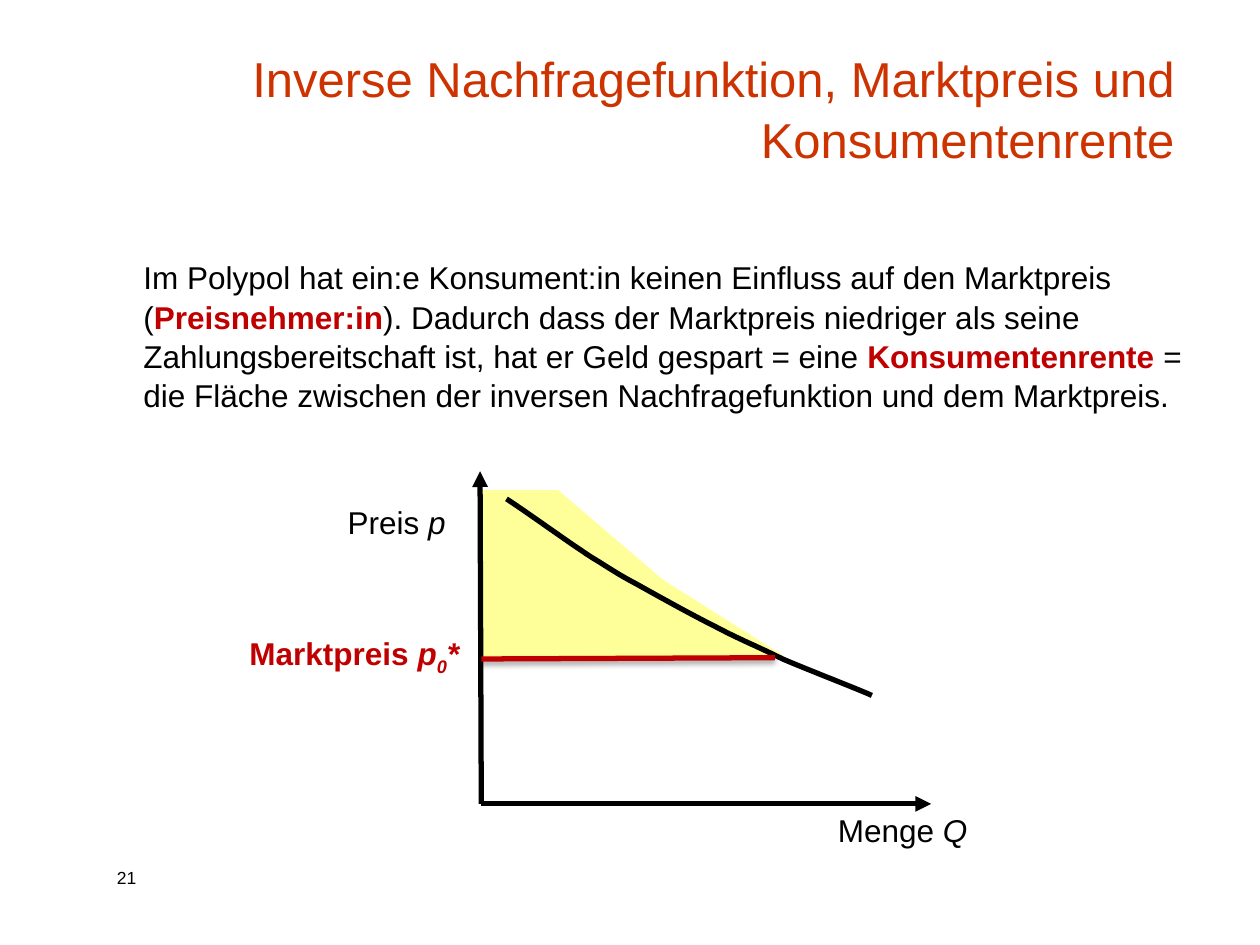
from lxml import etree
from pptx import Presentation, util as u
from pptx.dml.color import RGBColor
from pptx.enum import shapes, text
from pptx.oxml import ns, parse_xml

BLACK = RGBColor(0x00, 0x00, 0x00)
ORANGE = RGBColor(0xCC, 0x33, 0x00)
RED = RGBColor(0xC0, 0x00, 0x00)
YELLOW = RGBColor(0xFF, 0xFF, 0x99)

# Grid of 100 columns by 75 rows
CELL = u.Inches(0.1)
COLUMNS, ROWS = 100, 75
INSETS = (1, 0.5)
SHADOW = (
    f'<a:effectLst {ns.nsdecls("a")}><a:outerShdw blurRad="{u.Pt(3.1)}" '
    f'dist="{u.Pt(1.8)}" dir="5400000" rotWithShape="0"><a:srgbClr val="000000">'
    '<a:alpha val="35000"/></a:srgbClr></a:outerShdw></a:effectLst>'
)


def cells(*counts):
    return [round(count * CELL) for count in counts]


def shift(area, point):
    return area[0] + point[0], area[1] + point[1]


def write(box, area, spans, insets=(0, 0), size=18, color=BLACK, para_format=None,
          anchor=text.MSO_ANCHOR.TOP):
    """Place a text shape and fill it with (words, font format) spans."""
    box.left, box.top, box.width, box.height = cells(*area)
    side, edge = cells(*insets)
    frame = box.text_frame
    frame_format = {
        "margin_left": side, "margin_right": side, "margin_top": edge,
        "margin_bottom": edge, "word_wrap": True, "vertical_anchor": anchor,
        "auto_size": text.MSO_AUTO_SIZE.NONE,
    }
    for name, value in frame_format.items():
        setattr(frame, name, value)
    para = frame.paragraphs[0]
    for name, value in (para_format or {}).items():
        setattr(para, name, value)
    for words, span_format in spans:
        span = para.add_run()
        span.text = words
        font_format = {"name": "Arial", "size": u.Pt(size), "bold": False} | span_format
        span.font.color.rgb = font_format.pop("color", color)
        baseline = font_format.pop("baseline", None)
        for name, value in font_format.items():
            setattr(span.font, name, value)
        if baseline is not None:
            span.font._element.set("baseline", str(baseline))


def add_text(page, area, spans, **options):
    write(page.shapes.add_textbox(0, 0, 0, 0), area, spans, **options)


def add_line(page, area, start, end, color=BLACK, arrow=False, shadow=False):
    line = page.shapes.add_connector(
        shapes.MSO_CONNECTOR.STRAIGHT, *cells(*shift(area, start), *shift(area, end)))
    line.line.color.rgb = color
    line.line.width = u.Pt(3)
    if arrow:
        etree.SubElement(line.line._get_or_add_ln(), ns.qn("a:tailEnd"), type="triangle")
    properties = line._element.spPr
    if shadow:
        properties.append(parse_xml(SHADOW))
    else:
        etree.SubElement(properties, ns.qn("a:effectLst"))


def add_outline(page, area, points, close):
    corners = [cells(*shift(area, point)) for point in points]
    builder = page.shapes.build_freeform(*corners[0])
    builder.add_line_segments(corners[1:], close=close)
    outline = builder.convert_to_shape()
    outline.shadow.inherit = False
    return outline


def smooth(start, curves, steps=12):
    """Sample a chain of cubic curves, each given by two handles and an end."""
    points = [start]
    for curve in curves:
        knots = (points[-1], *curve)
        for step in range(1, steps + 1):
            t = step / steps
            weights = ((1 - t) ** 3, 3 * t * (1 - t) ** 2, 3 * t * t * (1 - t), t ** 3)
            points.append(tuple(
                sum(weight * knot[axis] for weight, knot in zip(weights, knots))
                for axis in (0, 1)))
    return points


def add_heading(page, area):
    write(page.shapes.title, area,
          [("Inverse Nachfragefunktion, Marktpreis und Konsumentenrente", {})],
          insets=INSETS, size=28, color=ORANGE, anchor=text.MSO_ANCHOR.BOTTOM,
          para_format={"alignment": text.PP_ALIGN.RIGHT, "line_spacing": 1.04})


def add_explanation(page, area):
    term = {"bold": True, "color": RED}
    add_text(page, area, [
        ("Im Polypol hat ein:e Konsument:in keinen Einfluss auf den Marktpreis (", {}),
        ("Preisnehmer:in", term),
        ("). Dadurch dass der Marktpreis niedriger als seine Zahlungsbereitschaft ist, "
         "hat er Geld gespart = eine ", {}),
        ("Konsumentenrente ", term),
        ("= die Fläche zwischen der inversen Nachfragefunktion und dem Marktpreis.", {}),
    ], insets=INSETS, para_format={"line_spacing": 1.04})


def add_diagram(page, area):
    origin = (18.4, 26.4)

    # Consumer surplus
    surplus = add_outline(page, area, [
        (18.4, 14.8), (42.6, 14.8), (32.8, 8.6), (24.5, 1.5), (18.4, 1.5)], close=True)
    surplus.fill.solid()
    surplus.fill.fore_color.rgb = YELLOW
    surplus.line.fill.background()

    # Axes
    for end in ((54.1, 26.4), (18.3, 0)):
        add_line(page, area, origin, end, arrow=True)

    # Inverse demand curve
    demand = add_outline(page, area, smooth((49.4, 17.8), [
        ((48.3, 17.3), (44.4, 15.8), (42.3, 14.9)),
        ((40.3, 13.9), (39, 13.4), (37.1, 12.4)),
        ((35.1, 11.4), (32.4, 9.9), (30.8, 9)),
        ((29.1, 8.1), (28.9, 7.9), (27.1, 6.8)),
        ((25.4, 5.7), (21.8, 3.1), (20.4, 2.2)),
    ]), close=False)
    demand.fill.background()
    demand.line.color.rgb = BLACK
    demand.line.width = u.Pt(3)

    # Market price
    add_line(page, area, (18.4, 14.9), (41.7, 14.8), color=RED, shadow=True)

    # Labels
    symbol = {"italic": True}
    price = {"bold": True, "color": RED}
    labels = [
        ((7.8, 2.5), (13, 3), [("Preis", {}), (" p", symbol)]),
        ((46.7, 27), (11, 3), [("Menge", {}), (" Q", symbol)]),
        ((0, 12.9), (17.1, 3.4), [
            ("Marktpreis", price), (" p", price | symbol),
            ("0", price | symbol | {"baseline": -25000}), ("*", price | symbol)]),
    ]
    for corner, extent, spans in labels:
        add_text(page, (*shift(area, corner), *extent), spans)


def add_page_number(page, area):
    add_text(page, area, [("21", {})], insets=INSETS, size=10)


def main():
    deck = Presentation()
    deck.slide_width, deck.slide_height = cells(COLUMNS, ROWS)
    page = deck.slides.add_slide(deck.slide_layouts[5])
    add_page_number(page, (8.3, 68.3, 6.7, 2.7))
    add_heading(page, (18.7, 4.2, 75.5, 9.7))
    add_diagram(page, (19.8, 37.4))
    add_explanation(page, (10.4, 19.9, 85.3, 13))
    deck.save("out.pptx")


if __name__ == "__main__":
    main()
